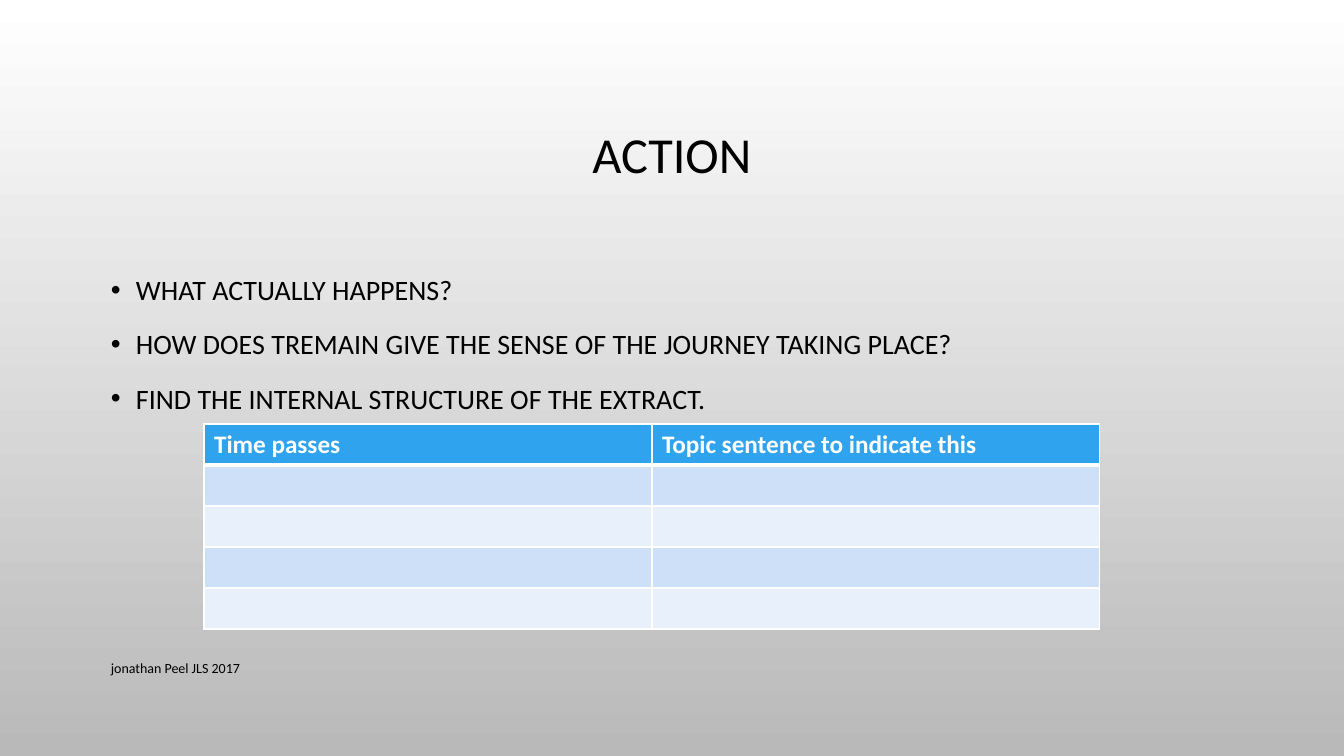
from lxml.etree import SubElement
from pptx import Presentation
from pptx.dml.color import RGBColor
from pptx.enum.text import MSO_ANCHOR, PP_ALIGN
from pptx.oxml.ns import qn
from pptx.util import Pt

EMU_PER_PX = 914400 / 100.8
FONT = "Calibri"
BLACK = RGBColor(0x00, 0x00, 0x00)
WHITE = RGBColor(0xFF, 0xFF, 0xFF)
GREY = RGBColor(0xB9, 0xB9, 0xB9)
HEADER_BLUE = RGBColor(0x2F, 0xA3, 0xEE)
BAND_COLORS = (RGBColor(0xCD, 0xE0, 0xF8), RGBColor(0xE8, 0xF0, 0xFC))

QUESTIONS = (
    "WHAT ACTUALLY HAPPENS?",
    "HOW DOES TREMAIN GIVE THE SENSE OF THE JOURNEY TAKING PLACE?",
    "FIND THE INTERNAL STRUCTURE OF THE EXTRACT.",
)
HEADERS = ("Time passes", "Topic sentence to indicate this")
EMPTY_ROWS = 4


def px(length):
    """Turn a length in px into EMU."""
    return round(length * EMU_PER_PX)


def style(paragraph, size, color=BLACK, bold=False):
    """Set the font of a whole paragraph."""
    font = paragraph.font
    font.name, font.size, font.bold = FONT, Pt(size), bold
    font.color.rgb = color


def paint_background(slide):
    """Shade the slide from white at the top to grey at the bottom."""
    fill = slide.background.fill
    fill.gradient()
    fill.gradient_angle = 270
    for stop, color in zip(fill.gradient_stops, (WHITE, GREY)):
        stop.color.rgb = color


def add_title(slide, left, top, width, height):
    """Place and format the title placeholder."""
    title = slide.shapes.title
    title.left, title.top = px(left), px(top)
    title.width, title.height = px(width), px(height)
    frame = title.text_frame
    frame.text = "ACTION"
    frame.vertical_anchor = MSO_ANCHOR.MIDDLE
    paragraph = frame.paragraphs[0]
    paragraph.alignment = PP_ALIGN.CENTER
    paragraph.line_spacing = 0.9
    style(paragraph, 36)


def add_text_frame(slide, left, top, width, height):
    """Add a wrapping text box and return its text frame."""
    box = slide.shapes.add_textbox(px(left), px(top), px(width), px(height))
    box.text_frame.word_wrap = True
    return box.text_frame


def add_questions(slide, left, top, width, height):
    """Add the bulleted questions."""
    frame = add_text_frame(slide, left, top, width, height)
    for index, question in enumerate(QUESTIONS):
        paragraph = frame.add_paragraph() if index else frame.paragraphs[0]
        paragraph.text = question
        paragraph.line_spacing = 1.2
        paragraph.space_before = Pt(10 if index else 0)
        properties = paragraph._p.get_or_add_pPr()
        properties.set("marL", str(px(25)))
        properties.set("indent", str(-px(25)))
        SubElement(properties, qn("a:buFont"), typeface="Arial")
        SubElement(properties, qn("a:buChar"), char="•")
        style(paragraph, 20)


def set_borders(cell, bottom_width):
    """Draw white lines round a cell."""
    properties = cell._tc.get_or_add_tcPr()
    widths = {"lnL": 1, "lnR": 1, "lnT": 1, "lnB": bottom_width}
    for index, (side, width) in enumerate(widths.items()):
        line = SubElement(properties, qn(f"a:{side}"), w=str(Pt(width)))
        fill = SubElement(line, qn("a:solidFill"))
        SubElement(fill, qn("a:srgbClr"), val=str(WHITE))
        properties.insert(index, line)


def add_time_table(slide, left, top, width, height):
    """Add the table with a header row and empty banded rows."""
    table = slide.shapes.add_table(
        EMPTY_ROWS + 1, len(HEADERS), px(left), px(top), px(width), px(height)
    ).table
    for row_index, row in enumerate(table.rows):
        for column_index, cell in enumerate(row.cells):
            is_header = row_index == 0
            cell.fill.solid()
            cell.fill.fore_color.rgb = (
                HEADER_BLUE if is_header else BAND_COLORS[(row_index - 1) % 2]
            )
            set_borders(cell, 3 if is_header else 1)
            if is_header:
                cell.text = HEADERS[column_index]
                style(cell.text_frame.paragraphs[0], 18, WHITE, True)


def add_footer(slide, left, top, width, height):
    """Add the author line."""
    frame = add_text_frame(slide, left, top, width, height)
    frame.vertical_anchor = MSO_ANCHOR.MIDDLE
    frame.text = "jonathan Peel JLS 2017"
    style(frame.paragraphs[0], 10)


def main():
    """Build and save the presentation."""
    presentation = Presentation()
    presentation.slide_width, presentation.slide_height = px(1344), px(756)
    slide = presentation.slides.add_slide(presentation.slide_layouts[5])
    paint_background(slide)
    add_title(slide, 101, 69, 1142, 176)
    add_questions(slide, 101, 261, 1142, 377)
    add_time_table(slide, 204, 424, 896, 205)
    add_footer(slide, 101, 648, 736, 40)
    presentation.save("out.pptx")


if __name__ == "__main__":
    main()
